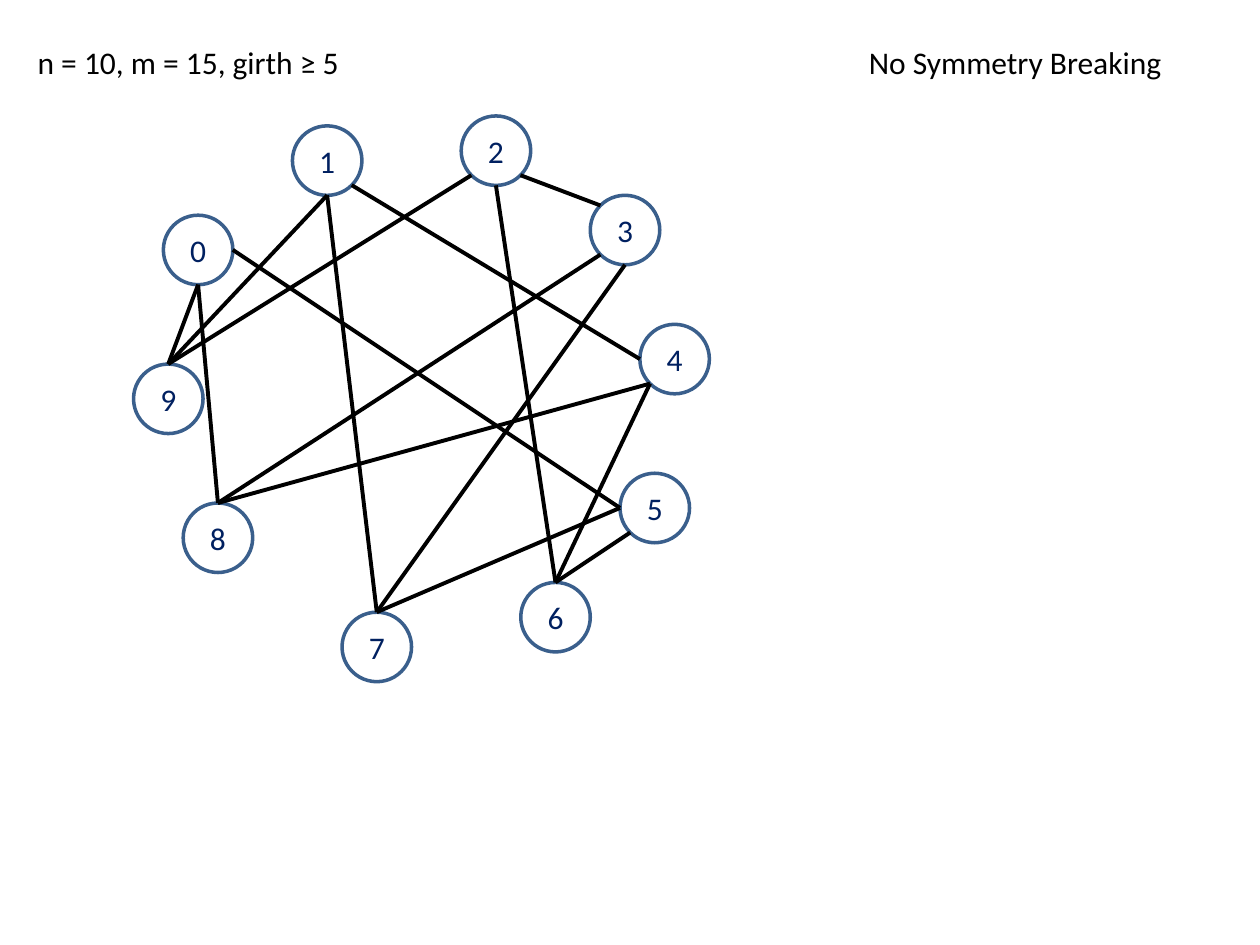
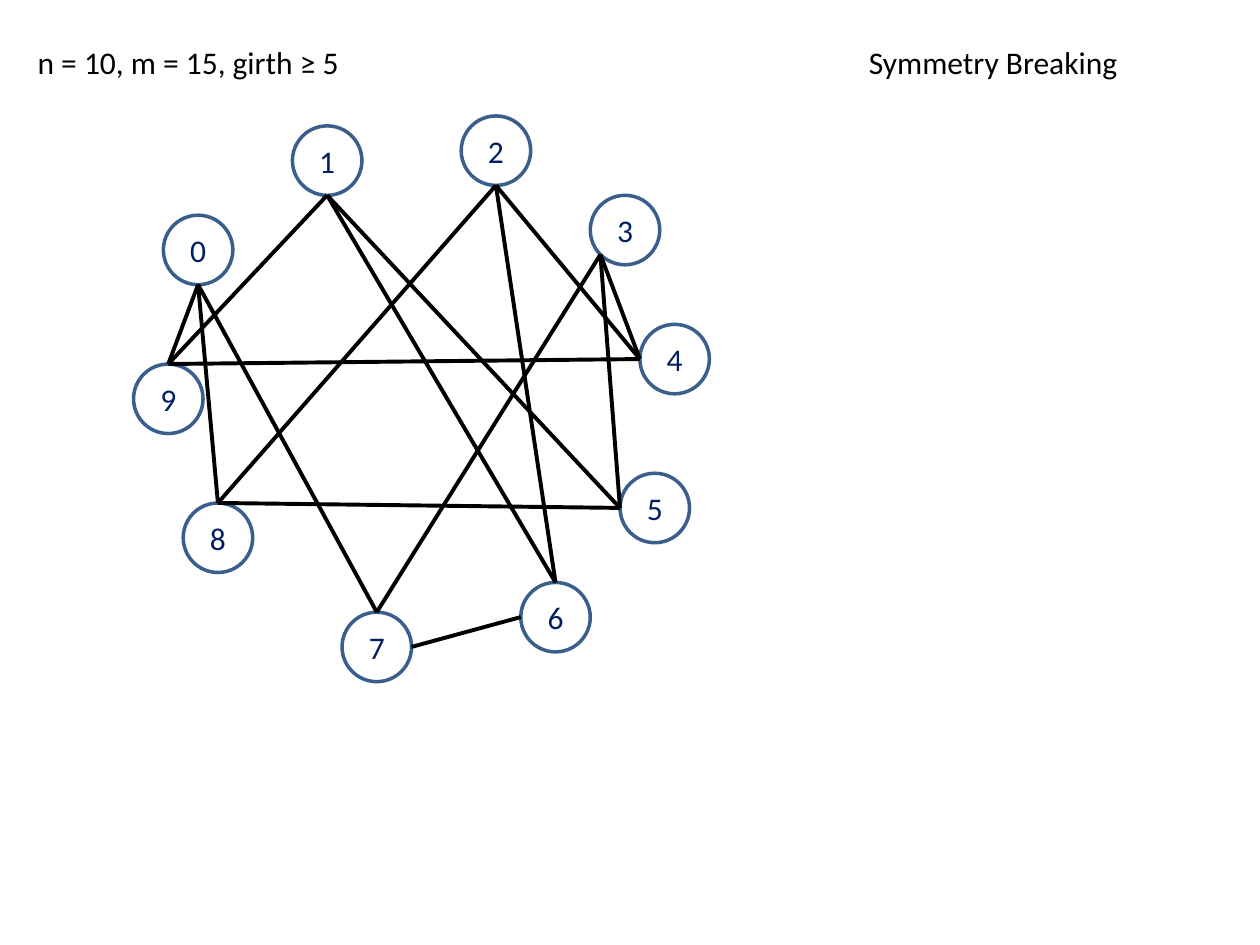
import math
import pptx
import pptx.dml.color
import pptx.enum.shapes
import pptx.enum.text
import pptx.oxml.ns
import pptx.util
import lxml.etree

Inches = pptx.util.Inches
ALIGN = pptx.enum.text.PP_ALIGN
ANCHOR = pptx.enum.text.MSO_ANCHOR

COLOURS = {"ink": "000000", "label": "002060", "ring": "3A5F8C"}
FONT = "Calibri"
PAGE_WIDTH, PAGE_HEIGHT = 10, 7.5

# Boxes are left, top, width, height in inches
HEADER_BOX = (0.2, 0.29, 9.16, 0.4)
GRAPH_BOX = (1.06, 0.92, 4.57, 4.49)

# The graph stands on a grid; each vertex gives the column and row of its corner
COLUMNS, ROWS = 58, 57
VERTEX_SPAN = 7
VERTICES = {
    0: (3, 10), 1: (16, 1), 2: (33, 0), 3: (46, 8), 4: (51, 21),
    5: (49, 36), 6: (39, 47), 7: (21, 50), 8: (5, 39), 9: (0, 25),
}

# Connection sites of a circle, anticlockwise from the top in steps of 45 degrees
SITES = ["N", "NW", "W", "SW", "S", "SE", "E", "NE"]

PARAMETERS = "n = 10, m = 15, girth ≥ 5"
# Heading, width of the heading, edges as vertex and site at both ends
GRAPHS = [
    ("No Symmetry Breaking", 2.55,
     "0S-9N 0S-8N 0E-5W 1S-9N 1S-7N 1SE-4W 2SW-9N 2S-6N 2SE-3NW "
     "8N-3SW 3S-7N 4SW-8N 6N-4SW 7N-5W 6N-5SW"),
    ("Symmetry Breaking", 2.19,
     "0S-9N 0S-8N 0S-7N 1S-9N 1S-5W 1S-6N 2S-6N 2S-4W 7N-3SW "
     "3SW-5W 4W-3SW 9N-4W 7E-6W 8N-5W 2S-8N"),
]


def colour(name):
    return pptx.dml.color.RGBColor.from_string(COLOURS[name])


def write_text(shape, text, ink="ink", size=18, align=ALIGN.LEFT,
               anchor=ANCHOR.TOP, margin=None):
    frame = shape.text_frame
    frame.word_wrap = False
    frame.vertical_anchor = anchor
    if margin is not None:
        frame.margin_left = frame.margin_right = Inches(margin)
        frame.margin_top = frame.margin_bottom = Inches(margin)
    para = frame.paragraphs[0]
    para.alignment = align
    span = para.add_run()
    span.text = text
    span.font.name = FONT
    span.font.size = pptx.util.Pt(size)
    span.font.color.rgb = colour(ink)


def add_header(page, box, heading, heading_width):
    left, top, width, height = box
    # Heading on the right, in the title placeholder
    title = page.shapes.title
    title.left, title.top = Inches(left + 0.72 * width), Inches(top)
    title.width, title.height = Inches(heading_width), Inches(height)
    # Parameters on the left
    parameters = page.shapes.add_textbox(
        Inches(left), Inches(top), Inches(0.287 * width), Inches(height))
    for shape, text in ((title, heading), (parameters, PARAMETERS)):
        write_text(shape, text)
        shape.text_frame.auto_size = pptx.enum.text.MSO_AUTO_SIZE.SHAPE_TO_FIT_TEXT


def add_vertex(page, number, left, top, width, height):
    circle = page.shapes.add_shape(
        pptx.enum.shapes.MSO_SHAPE.OVAL,
        Inches(left), Inches(top), Inches(width), Inches(height))
    circle.shadow.inherit = False
    circle.fill.background()
    circle.line.color.rgb = colour("ring")
    circle.line.width = pptx.util.Pt(2)
    write_text(circle, str(number), ink="label", align=ALIGN.CENTER,
               anchor=ANCHOR.MIDDLE, margin=0)
    return circle


def site_point(circle, site):
    angle = math.radians(45 * site)
    x = circle.left + circle.width / 2 * (1 - math.sin(angle))
    y = circle.top + circle.height / 2 * (1 - math.cos(angle))
    return round(x), round(y)


def add_edge(page, circles, edge):
    ends = [(circles[int(end[0])], SITES.index(end[1:])) for end in edge.split("-")]
    (start, start_site), (finish, finish_site) = ends
    line = page.shapes.add_connector(
        pptx.enum.shapes.MSO_CONNECTOR.STRAIGHT,
        *site_point(start, start_site), *site_point(finish, finish_site))
    line.line.color.rgb = colour("ink")
    line.line.width = pptx.util.Pt(2.25)
    qname = pptx.oxml.ns.qn
    lxml.etree.SubElement(line.element.spPr, qname("a:effectLst"))
    # A circle has eight sites, so set the site and then restore the end points
    line.begin_connect(start, 0)
    line.end_connect(finish, 0)
    for tag, site in (("a:stCxn", start_site), ("a:endCxn", finish_site)):
        next(line.element.iter(qname(tag))).set("idx", str(site))
    line.begin_x, line.begin_y = site_point(start, start_site)
    line.end_x, line.end_y = site_point(finish, finish_site)


def add_graph(page, box, edges):
    left, top, width, height = box
    column, row = width / COLUMNS, height / ROWS
    circles = {
        number: add_vertex(page, number, left + x * column, top + y * row,
                           VERTEX_SPAN * column, VERTEX_SPAN * row)
        for number, (x, y) in VERTICES.items()
    }
    for edge in edges.split():
        add_edge(page, circles, edge)


def main():
    deck = pptx.Presentation()
    deck.slide_width, deck.slide_height = Inches(PAGE_WIDTH), Inches(PAGE_HEIGHT)
    title_only = deck.slide_layouts[5]
    for heading, heading_width, edges in GRAPHS:
        page = deck.slides.add_slide(title_only)
        add_header(page, HEADER_BOX, heading, heading_width)
        add_graph(page, GRAPH_BOX, edges)
    deck.save("out.pptx")


if __name__ == "__main__":
    main()
